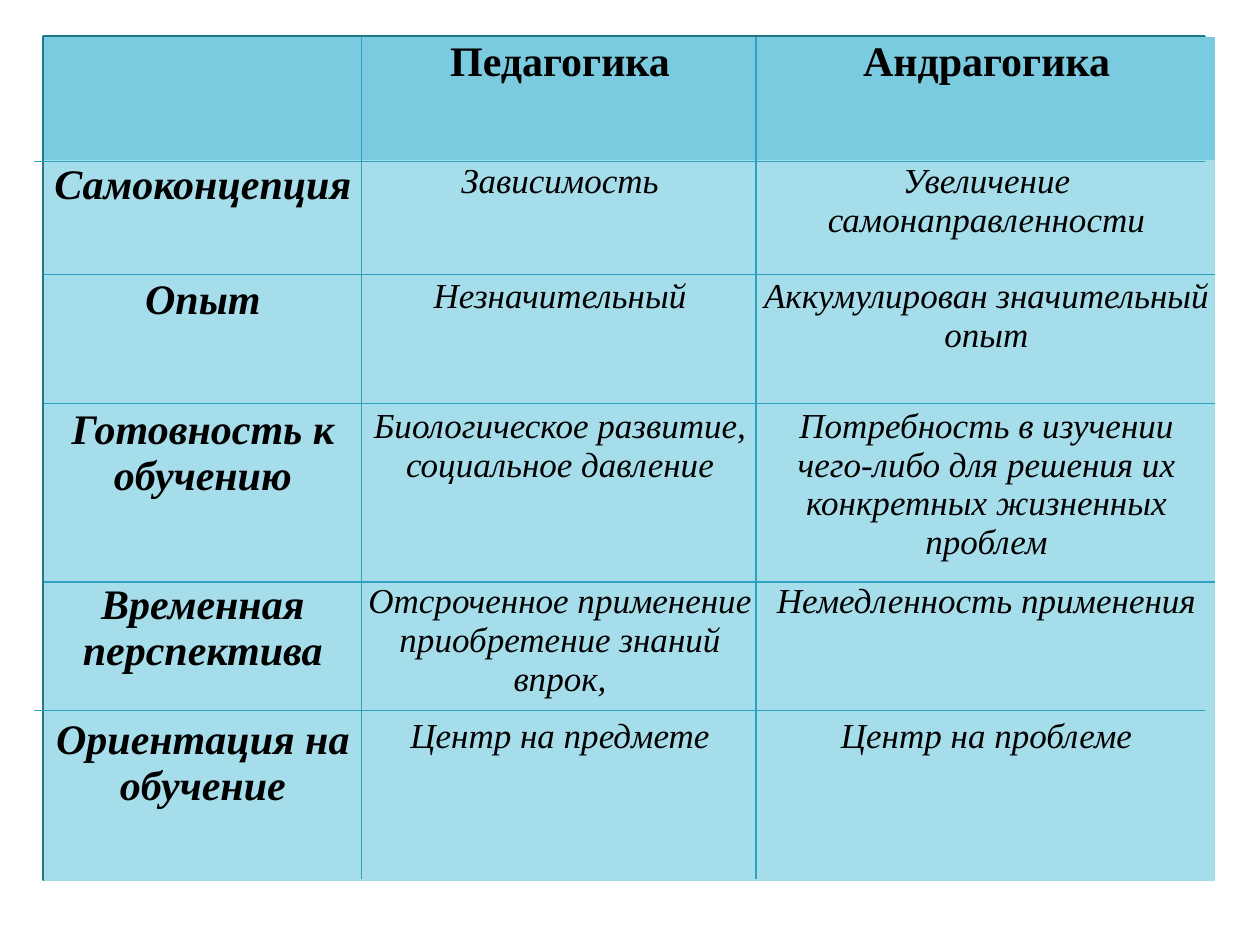
"""Build a slide with a table comparing pedagogy and andragogy."""
from lxml import etree
from pptx import Presentation
from pptx.dml.color import RGBColor
from pptx.enum.shapes import MSO_CONNECTOR as Connector, MSO_SHAPE as Shape
from pptx.enum.text import PP_ALIGN as Align
from pptx.oxml.ns import qn
from pptx.util import Inches, Pt

BLACK = RGBColor(0x00, 0x00, 0x00)
TEAL = RGBColor(0x2D, 0xA2, 0xBF)
DARK_TEAL = RGBColor(0x21, 0x78, 0x8D)
HEADER_BLUE = RGBColor(0x7A, 0xCB, 0xE0)
BODY_BLUE = RGBColor(0xA6, 0xDD, 0xEA)

LEFT, TOP, BOTTOM = 0.35, 0.29, 6.98
COLUMNS = [2.52, 3.15, 3.62]
ROWS = [0.98, 0.91, 1.03, 1.39, 1.07, 1.32]
NO_STYLE = "{2D5ABB26-0587-4C30-8999-92F81FD0307C}"

COMPARISON = [
    ["", "Педагогика", "Андрагогика"],
    ["Самоконцепция", "Зависимость", "Увеличение самонаправленности"],
    ["Опыт", "Незначительный", "Аккумулирован значительный опыт"],
    ["Готовность к\nобучению", "Биологическое развитие, социальное давление",
     "Потребность в изучении чего-либо для решения их конкретных жизненных проблем"],
    ["Временная перспектива", "Отсроченное применение\nприобретение знаний впрок,",
     "Немедленность применения"],
    ["Ориентация на обучение", "Центр на предмете", "Центр на проблеме"],
]
ROW_LINES = [(0.27, 1.28), (0.35, 2.18), (0.35, 3.2), (0.35, 4.62), (0.27, 5.64)]
COLUMN_LINES = [2.87, 6]


class SlideBuilder:
    header = {"size": Pt(24), "bold": True, "italic": False}
    label = {"size": Pt(24), "bold": True, "italic": True}
    body = {"size": Pt(20), "bold": False, "italic": True}
    margins = ("margin_left", "margin_right", "margin_top", "margin_bottom")

    def __init__(self, slide):
        self.slide = slide

    def panel(self, left, top, width, height):
        shape = self.slide.shapes.add_shape(
            Shape.RECTANGLE, Inches(left), Inches(top), Inches(width), Inches(height))
        shape.shadow.inherit = False
        shape.fill.solid()
        shape.fill.fore_color.rgb = TEAL
        shape.line.color.rgb = DARK_TEAL
        shape.line.width = Pt(2)

    def line(self, x1, y1, x2, y2):
        connector = self.slide.shapes.add_connector(
            Connector.STRAIGHT, Inches(x1), Inches(y1), Inches(x2), Inches(y2))
        connector.line.color.rgb = TEAL
        connector.line.width = Pt(0.79)
        etree.SubElement(connector._element.spPr, qn("a:effectLst"))

    def cell(self, cell, text, fill, style):
        cell.fill.solid()
        cell.fill.fore_color.rgb = fill
        for margin in self.margins:
            setattr(cell, margin, Inches(0.02))
        cell.text = text
        for paragraph in cell.text_frame.paragraphs:
            paragraph.alignment = Align.CENTER
            for run in paragraph.runs:
                run.font.name = "Times New Roman"
                run.font.color.rgb = BLACK
                for name, value in style.items():
                    setattr(run.font, name, value)

    def table(self, left, top, columns, rows, texts):
        table = self.slide.shapes.add_table(
            len(rows), len(columns), Inches(left), Inches(top),
            Inches(sum(columns)), Inches(sum(rows))).table
        table.horz_banding = False
        table._tbl.tblPr.find(qn("a:tableStyleId")).text = NO_STYLE
        for column, width in zip(table.columns, columns):
            column.width = Inches(width)
        for row_index, (row, height) in enumerate(zip(table.rows, rows)):
            row.height = Inches(height)
            fill = BODY_BLUE if row_index else HEADER_BLUE
            for column_index, text in enumerate(texts[row_index]):
                if row_index == 0:
                    style = self.header
                else:
                    style = self.body if column_index else self.label
                self.cell(table.cell(row_index, column_index), text, fill, style)


def main():
    presentation = Presentation()
    presentation.slide_width = Inches(10)
    presentation.slide_height = Inches(7.5)
    builder = SlideBuilder(presentation.slides.add_slide(presentation.slide_layouts[6]))
    builder.panel(LEFT, TOP, 9.21, BOTTOM - TOP)
    builder.table(LEFT, TOP, COLUMNS, ROWS, COMPARISON)
    for x, y in ROW_LINES:
        builder.line(x, y, x + 9.29, y)
    for x in COLUMN_LINES:
        builder.line(x, TOP, x, BOTTOM)
    presentation.save("out.pptx")


if __name__ == "__main__":
    main()
